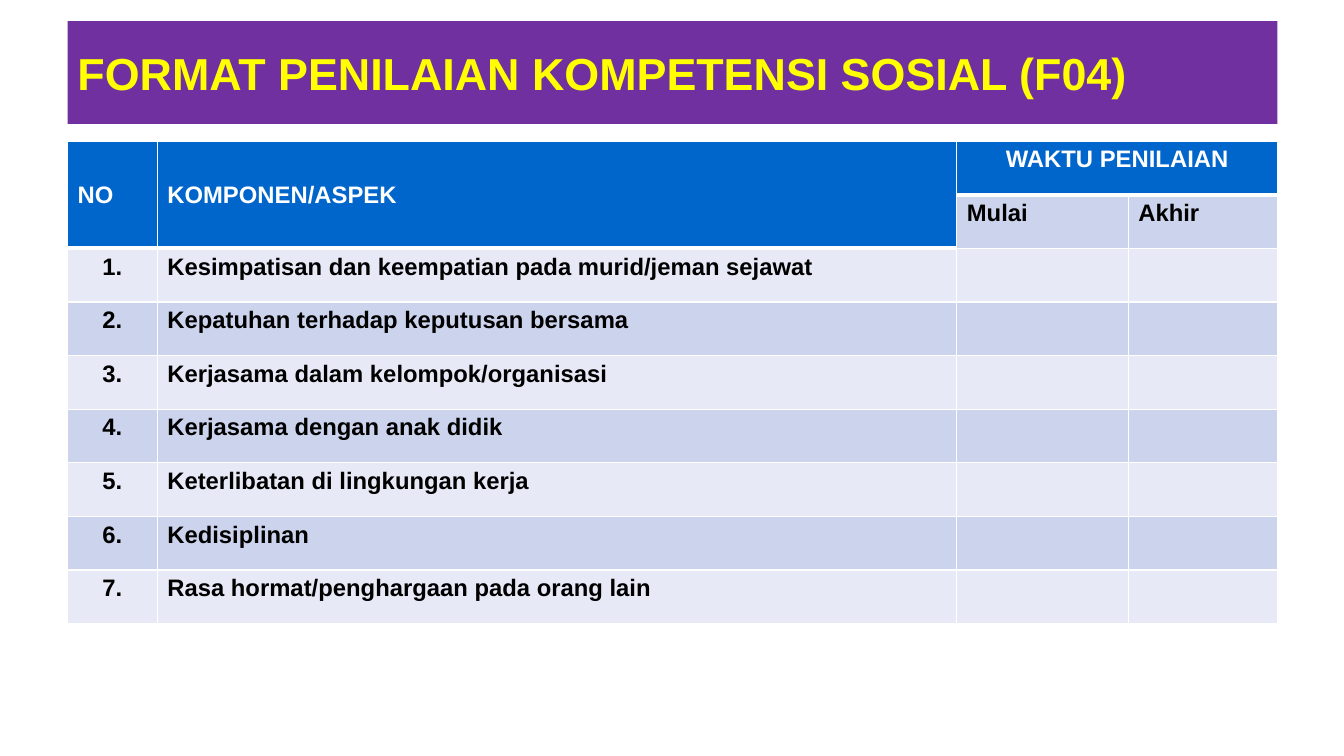
from lxml import etree
from pptx import Presentation
from pptx.dml.color import RGBColor
from pptx.enum.shapes import MSO_SHAPE
from pptx.enum.text import MSO_ANCHOR, PP_ALIGN
from pptx.oxml.ns import qn
from pptx.util import Inches, Pt

RECTANGLE = MSO_SHAPE.RECTANGLE
TOP, MIDDLE = MSO_ANCHOR.TOP, MSO_ANCHOR.MIDDLE
LEFT, CENTER = PP_ALIGN.LEFT, PP_ALIGN.CENTER

COLORS = {
    "banner": "7030A0",
    "title": "FFFF00",
    "header": "0066CC",
    "header_text": "FFFFFF",
    "text": "000000",
    "band_dark": "CCD3EC",
    "band_light": "E7EAF6",
    "border": "FFFFFF",
}
ASPECTS = [
    "Kesimpatisan dan keempatian pada murid/jeman sejawat",
    "Kepatuhan terhadap keputusan bersama",
    "Kerjasama dalam kelompok/organisasi",
    "Kerjasama dengan anak didik",
    "Keterlibatan di lingkungan kerja",
    "Kedisiplinan",
    "Rasa hormat/penghargaan pada orang lain",
]
ROWS = [
    ["NO", "KOMPONEN/ASPEK", "WAKTU PENILAIAN", ""],
    ["", "", "Mulai", "Akhir"],
] + [[f"{number}.", aspect, "", ""] for number, aspect in enumerate(ASPECTS, 1)]
COLUMN_WIDTHS = [0.89, 7.93, 1.7, 1.48]
HEADER_DEPTHS = [2, 2, 1, 1]
TABLE_HEIGHT = 4.79


def write_text(frame, text, size, color, align):
    para = frame.paragraphs[0]
    para.alignment = align
    span = para.add_run()
    span.text = text
    for name, value in {"name": "Arial", "size": Pt(size), "bold": True}.items():
        setattr(span.font, name, value)
    span.font.color.rgb = RGBColor.from_string(COLORS[color])


def add_borders(cell, widths):
    properties = cell._tc.get_or_add_tcPr()
    for side, width in widths.items():
        line = etree.SubElement(properties, qn(f"a:ln{side}"), w=str(Pt(width)))
        fill = etree.SubElement(line, qn("a:solidFill"))
        etree.SubElement(fill, qn("a:srgbClr"), val=COLORS["border"])


deck = Presentation()
deck.slide_width = Inches(13.33)
deck.slide_height = Inches(7.5)
page = deck.slides.add_slide(deck.slide_layouts[6])

banner = page.shapes.add_shape(
    RECTANGLE, Inches(0.67), Inches(0.21), Inches(12), Inches(1.02)
)
banner.shadow.inherit = False
banner.fill.solid()
banner.fill.fore_color.rgb = RGBColor.from_string(COLORS["banner"])
banner.line.fill.background()
banner.text_frame.word_wrap = True
banner.text_frame.vertical_anchor = MIDDLE
write_text(
    banner.text_frame, "FORMAT PENILAIAN KOMPETENSI SOSIAL (F04)", 32, "title", LEFT
)

table = page.shapes.add_table(
    len(ROWS), len(COLUMN_WIDTHS),
    Inches(0.67), Inches(1.4), Inches(12), Inches(TABLE_HEIGHT),
).table
for column, width in zip(table.columns, COLUMN_WIDTHS):
    column.width = Inches(width)
for row in table.rows:
    row.height = Inches(TABLE_HEIGHT / len(ROWS))

for row_index, texts in enumerate(ROWS):
    band = "band_dark" if row_index % 2 else "band_light"
    for column_index, text in enumerate(texts):
        depth = HEADER_DEPTHS[column_index]
        is_header = row_index < depth
        cell = table.cell(row_index, column_index)
        add_borders(cell, {
            "L": 1,
            "R": 1,
            "T": 3 if row_index == depth else 1,
            "B": 3 if is_header else 1,
        })
        cell.fill.solid()
        cell.fill.fore_color.rgb = RGBColor.from_string(
            COLORS["header" if is_header else band]
        )
        cell.vertical_anchor = MIDDLE if is_header and depth == 2 else TOP
        if text:
            centered = text == "WAKTU PENILAIAN" or (column_index == 0 and not is_header)
            write_text(
                cell.text_frame, text, 17,
                "header_text" if is_header else "text",
                CENTER if centered else LEFT,
            )

for first, last in [((0, 0), (1, 0)), ((0, 1), (1, 1)), ((0, 2), (0, 3))]:
    table.cell(*first).merge(table.cell(*last))

deck.save("out.pptx")
